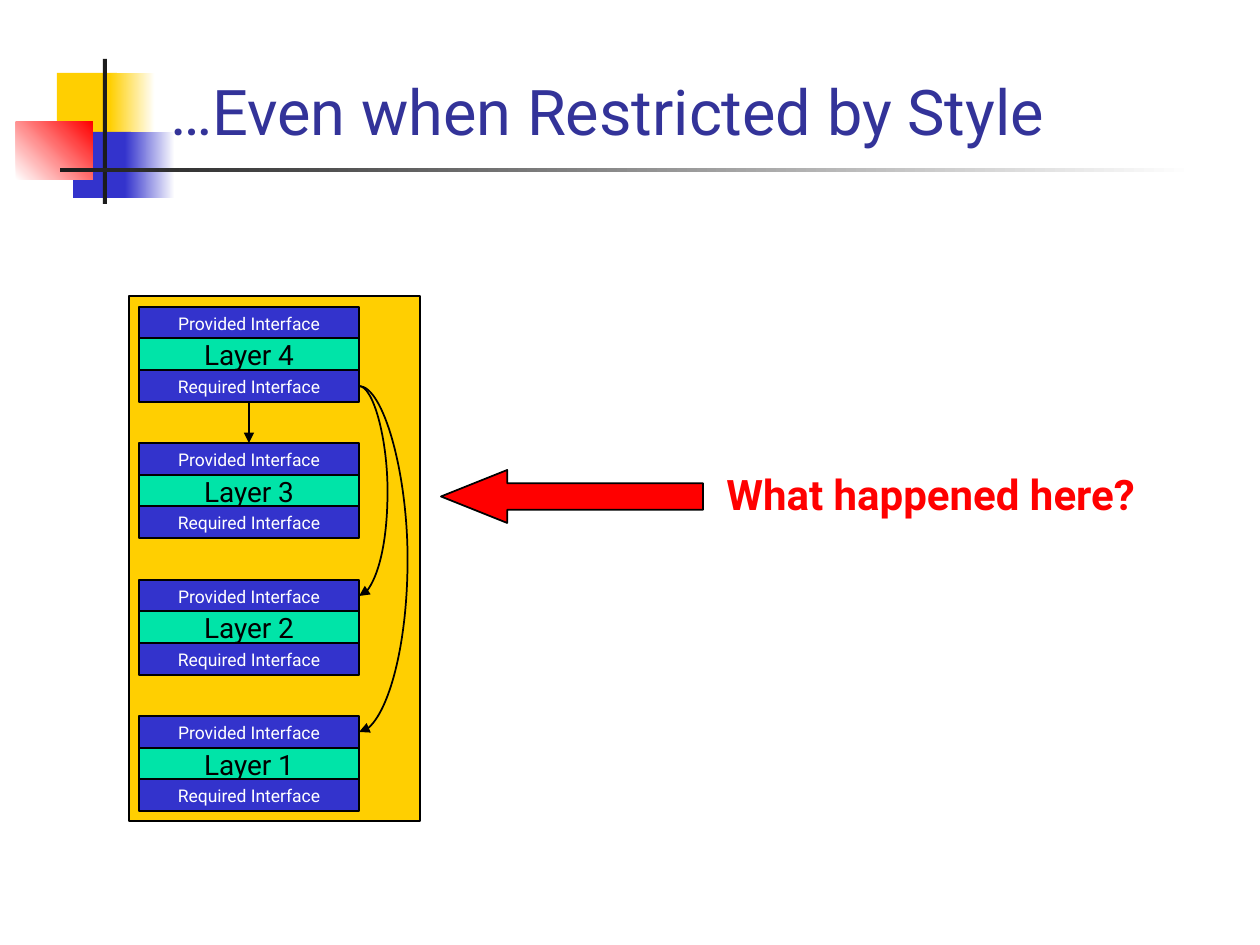
"""Build the slide on layered interfaces restricted by style."""
from lxml.etree import SubElement
from pptx import Presentation
from pptx.dml.color import RGBColor
from pptx.enum.shapes import MSO_CONNECTOR, MSO_SHAPE
from pptx.enum.text import MSO_ANCHOR, PP_ALIGN
from pptx.oxml.ns import qn
from pptx.util import Emu, Pt

PX = 914400 / 126
BLACK = RGBColor(0x00, 0x00, 0x00)
WHITE = RGBColor(0xFF, 0xFF, 0xFF)
YELLOW = RGBColor(0xFF, 0xCF, 0x01)
BLUE = RGBColor(0x33, 0x33, 0xCC)
INDIGO = RGBColor(0x33, 0x33, 0x99)
GREEN = RGBColor(0x00, 0xE4, 0xA8)
RED = RGBColor(0xFF, 0x00, 0x00)
CHARCOAL = RGBColor(0x1C, 0x1C, 0x1C)


def add_box(shapes, box, fill, fade=None, angle=0, outlined=False, kind=MSO_SHAPE.RECTANGLE):
    shape = shapes.add_shape(kind, *[Emu(round(length * PX)) for length in box])
    shape.shadow.inherit = False
    if fade is None:
        shape.fill.solid()
        shape.fill.fore_color.rgb = fill
    else:
        shape.fill.gradient()
        shape.fill.gradient_angle = angle
        for stop, color in zip(shape.fill.gradient_stops, (fill, fade)):
            stop.color.rgb = color
    if outlined:
        shape.line.color.rgb = BLACK
        shape.line.width = Pt(1)
    else:
        shape.line.fill.background()
    return shape


def write(shape, text, size, color, bold=False, wrap=False,
          align=PP_ALIGN.LEFT, anchor=MSO_ANCHOR.TOP):
    frame = shape.text_frame
    frame.word_wrap = wrap
    frame.vertical_anchor = anchor
    paragraph = frame.paragraphs[0]
    paragraph.text = text
    paragraph.alignment = align
    paragraph.font.name = "Roboto"
    paragraph.font.size = Pt(size)
    paragraph.font.bold = bold
    paragraph.font.color.rgb = color


presentation = Presentation()
presentation.slide_width = Emu(round(1260 * PX))
presentation.slide_height = Emu(round(945 * PX))
slide = presentation.slides.add_slide(presentation.slide_layouts[6])
shapes = slide.shapes

for box, fill, fade, angle in [
    ((57, 73, 60, 66), YELLOW, None, 0),
    ((110, 73, 45, 66), YELLOW, WHITE, 0),
    ((73, 132, 58, 66), BLUE, None, 0),
    ((125, 132, 50, 66), BLUE, WHITE, 0),
    ((16, 122, 77, 58), WHITE, RED, 45),
    ((103, 59, 4, 145), CHARCOAL, None, 0),
    ((60, 168, 1134, 4), CHARCOAL, WHITE, 0),
]:
    add_box(shapes, box, fill, fade, angle)

title = shapes.add_textbox(*[Emu(round(length * PX)) for length in (158, 49, 1074, 105)])
write(title, "…Even when Restricted by Style", 36, INDIGO, wrap=True, anchor=MSO_ANCHOR.BOTTOM)

add_box(shapes, (129, 296, 291, 525), YELLOW, outlined=True)
arrow = add_box(shapes, (441, 470, 262, 53), RED, outlined=True, kind=MSO_SHAPE.LEFT_ARROW)
arrow.adjustments[0] = 0.5
arrow.adjustments[1] = 1.25
question = shapes.add_textbox(*[Emu(round(length * PX)) for length in (714, 462, 490, 63)])
write(question, "What happened here?", 24, RED, bold=True)

for position, number in enumerate((4, 3, 2, 1)):
    layer = shapes.add_group_shape()
    for row, (text, size, color, fill) in enumerate([
        ("Provided Interface", 10, WHITE, BLUE),
        (f"Layer {number}", 16, BLACK, GREEN),
        ("Required Interface", 10, WHITE, BLUE),
    ]):
        top = 307 + (position * 273 + row * 63) // 2
        cell = add_box(layer.shapes, (139, top, 220, 32), fill, outlined=True)
        write(cell, text, size, color, align=PP_ALIGN.CENTER, anchor=MSO_ANCHOR.MIDDLE)

for kind, left, top, bottom, bulge in [
    (MSO_CONNECTOR.STRAIGHT, 249, 402, 443, None),
    (MSO_CONNECTOR.CURVE, 359, 386, 596, 14400000),
    (MSO_CONNECTOR.CURVE, 359, 386, 732, 24500000),
]:
    ends = [Emu(round(length * PX)) for length in (left, top, left, bottom)]
    connector = shapes.add_connector(kind, *ends)
    connector.line.color.rgb = BLACK
    connector.line.width = Pt(1)
    properties = connector._element.spPr
    SubElement(properties.find(qn("a:ln")), qn("a:tailEnd"), type="triangle")
    SubElement(properties, qn("a:effectLst"))
    if bulge:
        connector.width = Emu(1588)
        guides = properties.find(qn("a:prstGeom")).find(qn("a:avLst"))
        SubElement(guides, qn("a:gd"), name="adj1", fmla=f"val {bulge}")

presentation.save("out.pptx")
